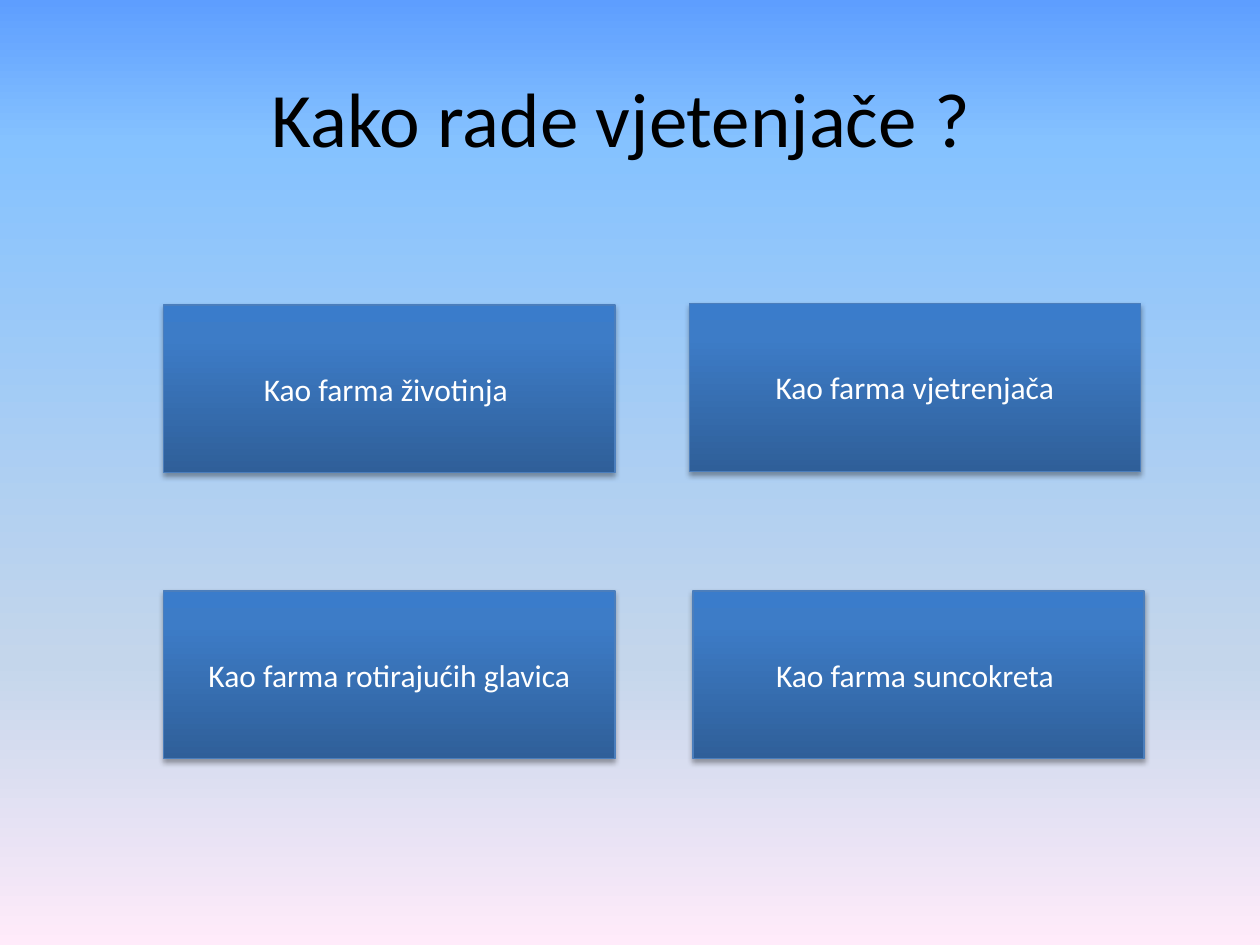
from dataclasses import dataclass

from lxml.etree import SubElement
from pptx import Presentation
from pptx.dml.color import RGBColor
from pptx.dml.fill import FillFormat
from pptx.enum.shapes import MSO_SHAPE
from pptx.enum.text import MSO_ANCHOR, PP_ALIGN
from pptx.oxml.ns import qn
from pptx.oxml.xmlchemy import BaseOxmlElement as Element
from pptx.slide import Slide
from pptx.text.text import TextFrame
from pptx.util import Inches, Pt

COLORS = {
    "title": "000000",
    "label": "FFFFFF",
    "border": "4B7EBC",
    "shadow": "000000",
    "sky_top": "5E9EFF",
    "sky_light": "85C2FF",
    "sky_pale": "C4D6EB",
    "sky_pink": "FFEBFA",
    "button_dark": "2F5F99",
    "button_mid": "3D7CC7",
    "button_light": "3A7CCB",
}
SKY = [(0, "sky_top"), (15, "sky_light"), (70, "sky_pale"), (100, "sky_pink")]
BUTTON = [(0, "button_dark"), (80, "button_mid"), (100, "button_light")]
BUTTON_W, BUTTON_H = 3.58, 1.33


@dataclass(frozen=True)
class Answer:
    text: str
    left: float
    top: float


ANSWERS = [
    Answer("Kao farma rotirajućih glavica", 1.3, 4.69),
    Answer("Kao farma životinja ", 1.3, 2.42),
    Answer("Kao farma vjetrenjača", 5.47, 2.41),
    Answer("Kao farma suncokreta ", 5.5, 4.69),
]


def write(tf: TextFrame, text: str, *, size: float, color: str, font: str = "Calibri") -> None:
    """Put one centred line of formatted text in a text frame."""
    tf.word_wrap = True
    tf.vertical_anchor = MSO_ANCHOR.MIDDLE
    p = tf.paragraphs[0]
    p.alignment = PP_ALIGN.CENTER
    r = p.add_run()
    r.text = text
    r.font.name = font
    r.font.size = Pt(size)
    r.font.color.rgb = RGBColor.from_string(COLORS[color])


def set_gradient(fill: FillFormat, owner: Element, stops: list[tuple[int, str]], angle: float) -> None:
    """Fill with a linear gradient whose angle runs counter-clockwise."""
    fill.gradient()
    fill.gradient_angle = angle
    stop_list = next(owner.iter(qn("a:gsLst")))
    for old in list(stop_list):
        stop_list.remove(old)
    for position, color in stops:
        stop = SubElement(stop_list, qn("a:gs"), pos=str(position * 1000))
        SubElement(stop, qn("a:srgbClr"), val=COLORS[color])


def add_shadow(sp_pr: Element) -> None:
    """Add a soft shadow below a shape."""
    effects = sp_pr.find(qn("a:effectLst"))
    shadow = SubElement(
        effects, qn("a:outerShdw"), blurRad=str(Pt(3.1)), dist=str(Pt(1.8)), dir="5400000", rotWithShape="0"
    )
    color = SubElement(shadow, qn("a:srgbClr"), val=COLORS["shadow"])
    SubElement(color, qn("a:alpha"), val="35000")


def add_title(s: Slide, text: str) -> None:
    """Draw the question at the top of the slide."""
    sp = s.shapes.add_textbox(Inches(0.5), Inches(0.3), Inches(9), Inches(1.25))
    write(sp.text_frame, text, size=44, color="title")


def add_answer(s: Slide, answer: Answer) -> None:
    """Draw one answer button."""
    sp = s.shapes.add_shape(
        MSO_SHAPE.ACTION_BUTTON_CUSTOM,
        Inches(answer.left), Inches(answer.top), Inches(BUTTON_W), Inches(BUTTON_H),
    )
    sp_pr = sp._element.spPr
    set_gradient(sp.fill, sp_pr, BUTTON, 90)
    sp.line.color.rgb = RGBColor.from_string(COLORS["border"])
    sp.line.width = Pt(0.75)
    sp.shadow.inherit = False
    add_shadow(sp_pr)
    write(sp.text_frame, answer.text, size=18, color="label")


def main() -> None:
    """Build and save the quiz slide."""
    prs = Presentation()
    prs.slide_width, prs.slide_height = Inches(10), Inches(7.5)
    s = prs.slides.add_slide(prs.slide_layouts[6])
    set_gradient(s.background.fill, s._element, SKY, 270)
    add_title(s, "Kako rade vjetenjače ? ")
    for answer in ANSWERS:
        add_answer(s, answer)
    prs.save("out.pptx")


if __name__ == "__main__":
    main()
